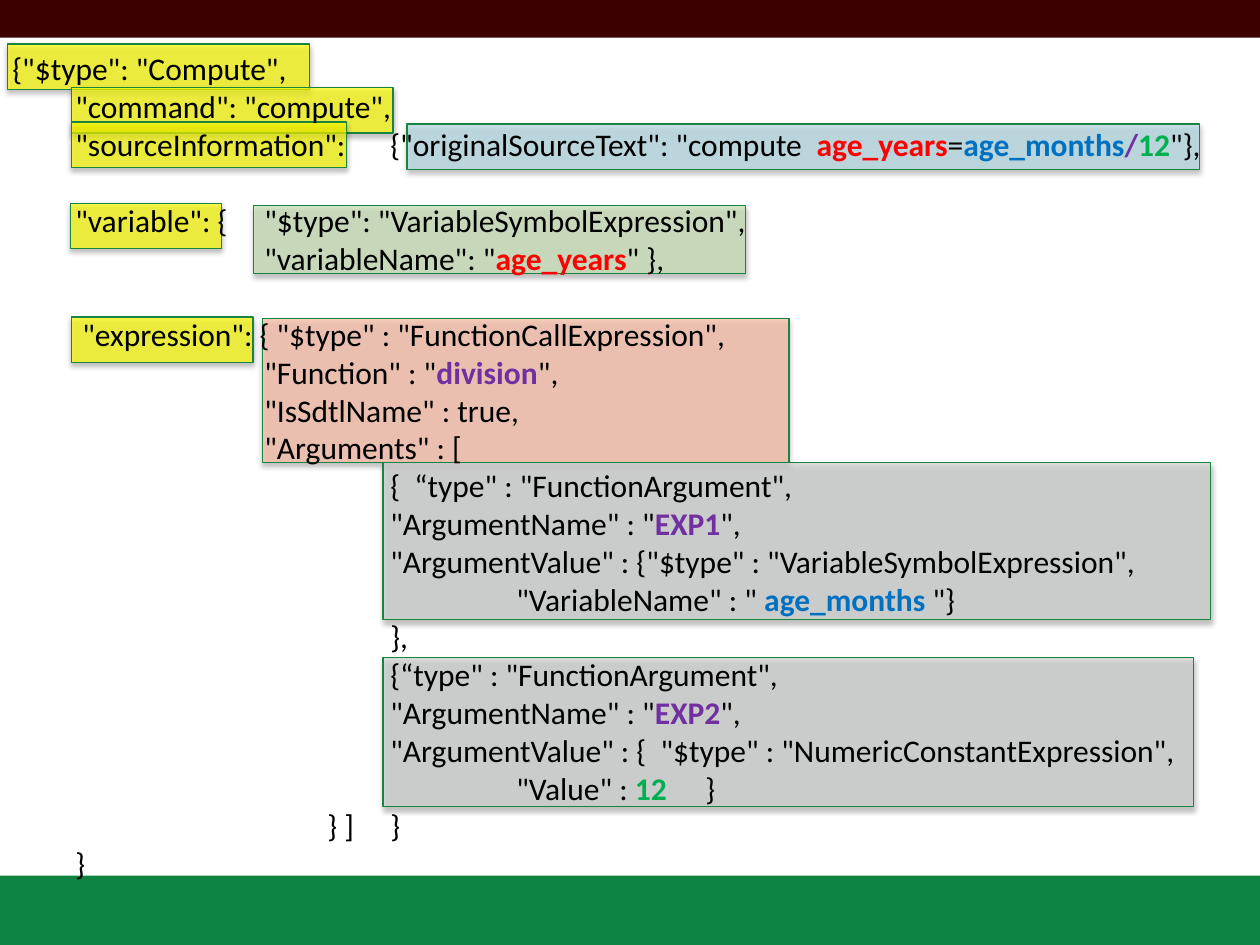
import dataclasses

import lxml.etree
import pptx
import pptx.dml.color
import pptx.enum.shapes
import pptx.enum.text
import pptx.oxml.ns
import pptx.util

Pt = pptx.util.Pt
qn = pptx.oxml.ns.qn

BLACK = "000000"
RED = "FF0000"
BLUE = "0070C0"
PURPLE = "7030A0"
GREEN = "00B050"
YELLOW = "FFFF00"
GREY = "CFD0D0"
OUTLINE = "19843F"
LINE_PITCH = 22


@dataclasses.dataclass(frozen=True)
class Area:
    left: float
    top: float
    width: float
    height: float
    fill: str


@dataclasses.dataclass(frozen=True)
class Accent:
    text: str
    color: str


@dataclasses.dataclass(frozen=True)
class CodeLine:
    indent: float
    pieces: tuple
    tab: float = 0
    gap_above: float = 0


BANDS = (
    Area(0, 500.4, 720, 39.6, "0F8441"),
    Area(0, 0, 720, 21.6, "3C0001"),
)

HIGHLIGHTS = (
    Area(4.3, 25.2, 172.8, 25.9, YELLOW),
    Area(41, 50.2, 183.6, 25.9, YELLOW),
    Area(232.6, 70.8, 452.9, 25.9, "B7DEE8"),
    Area(41, 69.8, 157, 25.9, YELLOW),
    Area(40.3, 116.2, 86.4, 25.9, YELLOW),
    Area(41, 181.2, 103.7, 25.9, YELLOW),
    Area(144.7, 117.4, 281.5, 38.9, "C8E3B5"),
    Area(149.8, 182.2, 301, 82.1, "FEBFA6"),
    Area(218.9, 264.2, 473, 90, GREY),
    Area(218.9, 375.8, 463, 85, GREY),
)

CODE = (
    CodeLine(0, ('{"$type": "Compute",',)),
    CodeLine(36, ('"command": "compute",',)),
    CodeLine(36, (
        '"sourceInformation":\t{"originalSourceText": "compute  ',
        Accent("age_years", RED), "=", Accent("age_months", BLUE),
        Accent("/", PURPLE), Accent("12", GREEN), '"},',
    ), tab=219),
    CodeLine(36, ('"variable": {\t"$type": "VariableSymbolExpression",',),
             tab=144, gap_above=LINE_PITCH),
    CodeLine(144, ('"variableName": "', Accent("age_years", RED), '" },')),
    CodeLine(40, ('"expression": { "$type" : "FunctionCallExpression",',),
             gap_above=LINE_PITCH),
    CodeLine(144, ('"Function" : "', Accent("division", PURPLE), '",')),
    CodeLine(144, ('"IsSdtlName" : true,',)),
    CodeLine(144, ('"Arguments" : [',)),
    CodeLine(216, ('{  “type" : "FunctionArgument",',)),
    CodeLine(216, ('"ArgumentName" : "', Accent("EXP1", PURPLE), '",')),
    CodeLine(216, ('"ArgumentValue" : {"$type" : "VariableSymbolExpression",',)),
    CodeLine(288, ('"VariableName" : " ', Accent("age_months", BLUE), ' "}')),
    CodeLine(216, ("},",)),
    CodeLine(216, ('{“type" : "FunctionArgument",',)),
    CodeLine(216, ('"ArgumentName" : "', Accent("EXP2", PURPLE), '",')),
    CodeLine(216, ('"ArgumentValue" : {  "$type" : "NumericConstantExpression",',)),
    CodeLine(288, ('"Value" : ', Accent("12", GREEN), "\t}"), tab=406.5),
    CodeLine(180, ("} ]\t}",), tab=219.5),
    CodeLine(36, ("}",)),
)


def rgb(color: str) -> pptx.dml.color.RGBColor:
    return pptx.dml.color.RGBColor.from_string(color)


def add_area(slide, area: Area):
    block = slide.shapes.add_shape(
        pptx.enum.shapes.MSO_SHAPE.RECTANGLE,
        Pt(area.left), Pt(area.top), Pt(area.width), Pt(area.height))
    block.shadow.inherit = False
    block.fill.solid()
    block.fill.fore_color.rgb = rgb(area.fill)
    block.line.fill.background()
    return block


def add_alpha(color_element, percent: int) -> None:
    lxml.etree.SubElement(color_element, qn("a:alpha"), val=str(percent * 1000))


def add_highlight(slide, area: Area) -> None:
    block = add_area(slide, area)
    block.line.color.rgb = rgb(OUTLINE)
    block.line.width = Pt(0.75)
    properties = block._element.spPr
    add_alpha(properties.find(qn("a:solidFill")).find(qn("a:srgbClr")), 68)
    shadow = lxml.etree.SubElement(
        properties.find(qn("a:effectLst")), qn("a:outerShdw"),
        blurRad=str(Pt(3.1)), dist=str(Pt(1.8)), dir="5400000", rotWithShape="0")
    add_alpha(lxml.etree.SubElement(shadow, qn("a:srgbClr"), val=BLACK), 35)


def write_line(paragraph, line: CodeLine) -> None:
    paragraph.space_before = Pt(line.gap_above)
    properties = paragraph._p.get_or_add_pPr()
    properties.set("marL", "0")
    properties.set("indent", str(Pt(line.indent)))
    if line.tab:
        stops = lxml.etree.SubElement(properties, qn("a:tabLst"))
        lxml.etree.SubElement(stops, qn("a:tab"), pos=str(Pt(line.tab)), algn="l")
    for piece in line.pieces:
        accented = isinstance(piece, Accent)
        run = paragraph.add_run()
        run.text = piece.text if accented else piece
        run.font.color.rgb = rgb(piece.color if accented else BLACK)
        formats = {"name": "Calibri", "size": Pt(18), "bold": accented}
        for attribute, value in formats.items():
            setattr(run.font, attribute, value)


def add_code(slide, lines: tuple) -> None:
    listing = slide.shapes.add_textbox(Pt(0), Pt(24.5), Pt(712), Pt(487.4)).text_frame
    formats = {
        "word_wrap": True,
        "auto_size": pptx.enum.text.MSO_AUTO_SIZE.SHAPE_TO_FIT_TEXT,
    }
    for attribute, value in formats.items():
        setattr(listing, attribute, value)
    for index, line in enumerate(lines):
        write_line(listing.add_paragraph() if index else listing.paragraphs[0], line)


def main() -> None:
    deck = pptx.Presentation()
    deck.slide_width, deck.slide_height = Pt(720), Pt(540)
    slide = deck.slides.add_slide(deck.slide_layouts[6])
    for band in BANDS:
        add_area(slide, band)
    for highlight in HIGHLIGHTS:
        add_highlight(slide, highlight)
    add_code(slide, CODE)
    deck.save("out.pptx")


if __name__ == "__main__":
    main()
